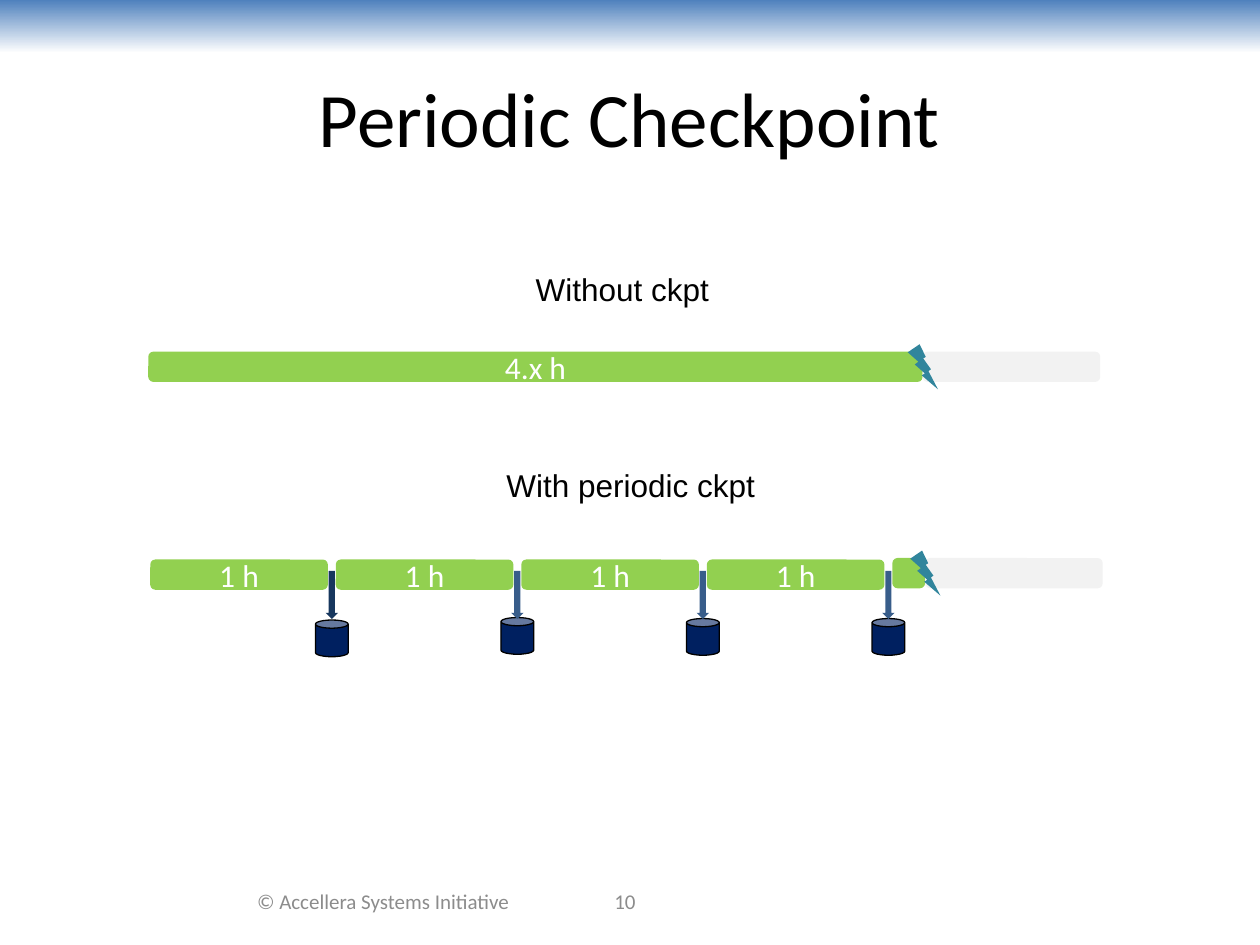
from pptx import Presentation
from pptx.dml.color import RGBColor
from pptx.enum import shapes, text
from pptx.util import Cm, Pt

BLUE = RGBColor(0x4F, 0x81, 0xBD)
WHITE = RGBColor(0xFF, 0xFF, 0xFF)
BLACK = RGBColor(0, 0, 0)
GRAY = RGBColor(0x8C, 0x8C, 0x8C)
GREEN = RGBColor(0x92, 0xD0, 0x50)
PALE = RGBColor(0xF2, 0xF2, 0xF2)
TEAL = RGBColor(0x31, 0x85, 0x9C)
NAVY = RGBColor(0x00, 0x20, 0x60)
DARK_ARROW = RGBColor(0x17, 0x37, 0x5E)
ARROW = RGBColor(0x38, 0x5D, 0x8A)

CENTER = text.PP_ALIGN.CENTER
LEFT = text.PP_ALIGN.LEFT
KIND = shapes.MSO_SHAPE

LABELS = [
    ("Periodic Checkpoint", (1.27, 0.76, 22.86, 3.18), 44, "Calibri", BLACK, CENTER),
    ("© Accellera Systems Initiative", (4.65, 17.65, 6.15, 1.02), 12, "Calibri", GRAY, CENTER),
    ("10", (10.16, 17.65, 4.88, 1.02), 12, "Calibri", GRAY, CENTER),
    ("Without ckpt", (10.8, 5.44, 4.24, 0.76), 18, "Arial", BLACK, LEFT),
    ("With periodic ckpt", (10.21, 9.4, 5.08, 0.76), 18, "Arial", BLACK, LEFT),
]
INTERVALS = ["1 h", "1 h", "1 h", "1 h"]
CAN_TOPS = [12.5, 12.45, 12.47, 12.47]
ARROW_COLORS = [DARK_ARROW, ARROW, ARROW, ARROW]

BAR_HEIGHT = 0.61
INTERVAL_WIDTH = 3.58
PITCH = 3.74
INTERVAL_LEFT = 3.03
INTERVAL_TOP = 11.28
CAN_WIDTH, CAN_HEIGHT = 0.66, 0.74
ARROW_WIDTH, ARROW_HEIGHT = 0.25, 0.97


def write(shape, words, size, font, color, align):
    frame = shape.text_frame
    frame.word_wrap = True
    frame.vertical_anchor = text.MSO_ANCHOR.MIDDLE
    paragraph = frame.paragraphs[0]
    paragraph.text = words
    paragraph.alignment = align
    paragraph.font.size = Pt(size)
    paragraph.font.name = font
    paragraph.font.color.rgb = color


def add_label(slide, words, box, size, font, color, align):
    shape = slide.shapes.add_textbox(*map(Cm, box))
    write(shape, words, size, font, color, align)
    if align == LEFT:
        frame = shape.text_frame
        frame.margin_left = frame.margin_right = 0
        frame.margin_top = frame.margin_bottom = 0
        frame.vertical_anchor = text.MSO_ANCHOR.TOP


def add_figure(slide, kind, left, top, width, height, color, words=None):
    shape = slide.shapes.add_shape(kind, Cm(left), Cm(top), Cm(width), Cm(height))
    shape.shadow.inherit = False
    shape.fill.solid()
    shape.fill.fore_color.rgb = color
    shape.line.fill.background()
    if words:
        write(shape, words, 18, "Calibri", WHITE, CENTER)
    return shape


def add_bar(slide, left, top, width, color, words=None):
    add_figure(slide, KIND.ROUNDED_RECTANGLE, left, top, width, BAR_HEIGHT, color, words)


def add_failed_run(slide, left, top, crash, words=None):
    add_bar(slide, left, top, crash - left, GREEN, words)
    add_bar(slide, crash, top, INTERVAL_WIDTH, PALE)
    add_figure(slide, KIND.LIGHTNING_BOLT, crash - 0.3, top - 0.15, 0.61, 0.91, TEAL)


def add_header_band(slide, width):
    band = add_figure(slide, KIND.RECTANGLE, 0, 0, width, 1.07, BLUE)
    band.fill.gradient()
    band.fill.gradient_angle = 270
    for stop, color in zip(band.fill.gradient_stops, (BLUE, WHITE)):
        stop.color.rgb = color


def main():
    presentation = Presentation()
    presentation.slide_width, presentation.slide_height = Cm(25.4), Cm(19.05)
    slide = presentation.slides.add_slide(presentation.slide_layouts[6])

    add_header_band(slide, 25.4)
    for label in LABELS:
        add_label(slide, *label)

    add_failed_run(slide, 2.99, 7.09, 18.6, "4.x h")

    lefts = [INTERVAL_LEFT + PITCH * i for i in range(len(INTERVALS) + 1)]
    for left, words in zip(lefts, INTERVALS):
        add_bar(slide, left, INTERVAL_TOP, INTERVAL_WIDTH, GREEN, words)
    add_failed_run(slide, lefts[-1], 11.25, 18.65)

    for left, can_top, color in zip(lefts, CAN_TOPS, ARROW_COLORS):
        middle = left + (INTERVAL_WIDTH + PITCH) / 2
        can = add_figure(slide, KIND.CAN, middle - CAN_WIDTH / 2, can_top,
                         CAN_WIDTH, CAN_HEIGHT, NAVY)
        can.line.color.rgb = BLACK
        can.line.width = Pt(0.75)
        add_figure(slide, KIND.DOWN_ARROW, middle - ARROW_WIDTH / 2, 11.51,
                   ARROW_WIDTH, ARROW_HEIGHT, color)

    presentation.save("out.pptx")


if __name__ == "__main__":
    main()
